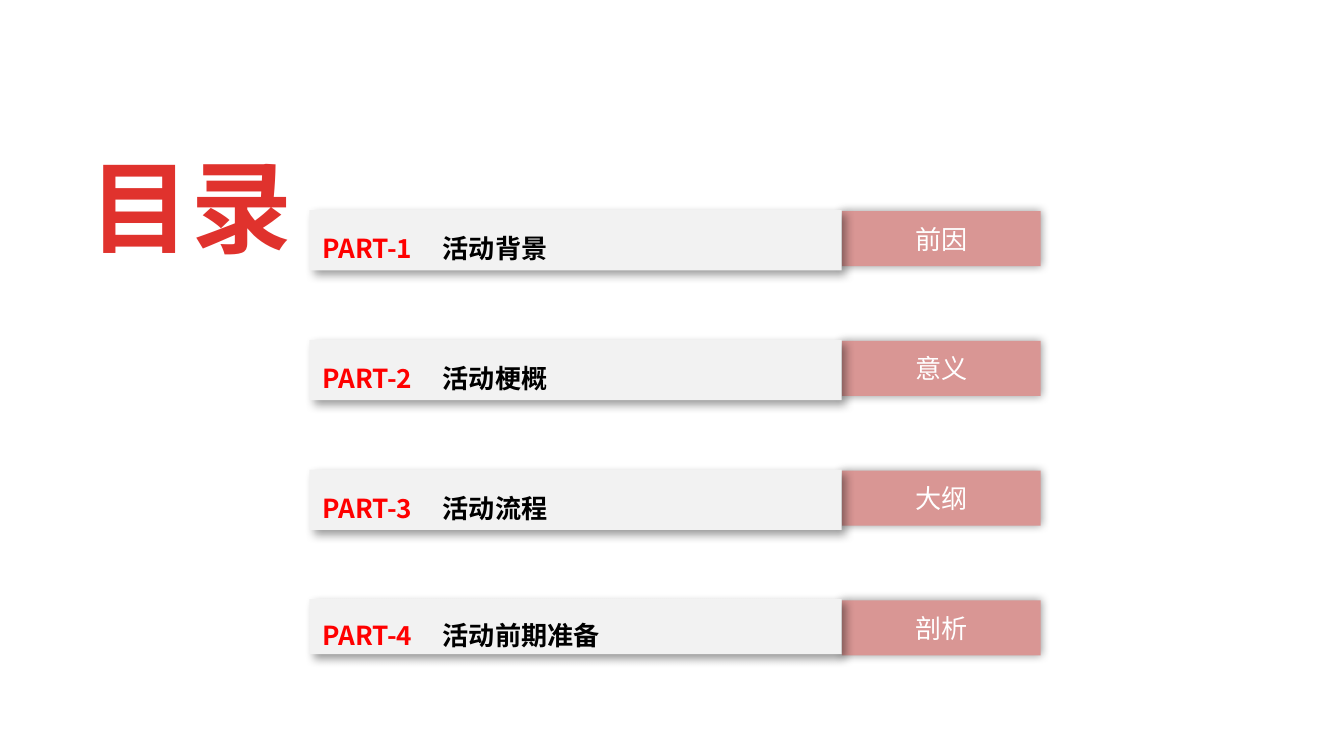
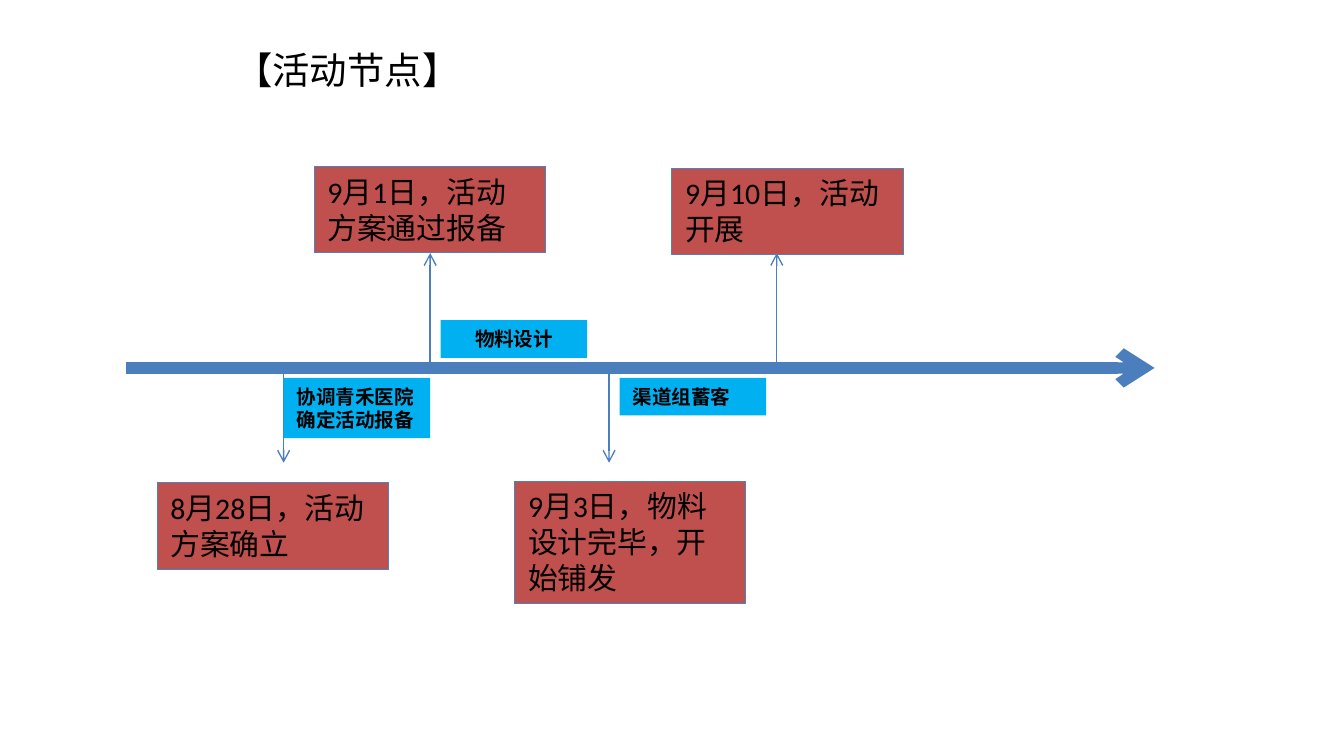
from dataclasses import dataclass
from typing import Any, Optional

from lxml import etree
from pptx import Presentation
from pptx.dml.color import RGBColor
from pptx.enum.shapes import MSO_CONNECTOR, MSO_SHAPE
from pptx.enum.text import MSO_ANCHOR, MSO_AUTO_SIZE, PP_ALIGN
from pptx.oxml.ns import qn
from pptx.util import Cm, Pt

RECT = MSO_SHAPE.RECTANGLE
STRAIGHT = MSO_CONNECTOR.STRAIGHT
LEFT, CENTER = PP_ALIGN.LEFT, PP_ALIGN.CENTER
TOP, MIDDLE = MSO_ANCHOR.TOP, MSO_ANCHOR.MIDDLE
NO_FIT, SHRINK = MSO_AUTO_SIZE.NONE, MSO_AUTO_SIZE.TEXT_TO_FIT_SHAPE

WHITE = RGBColor(0xFF, 0xFF, 0xFF)
BLACK = RGBColor(0x00, 0x00, 0x00)
RED = RGBColor(0xFF, 0x00, 0x00)
TITLE_RED = RGBColor(0xE0, 0x32, 0x2D)
DARK_RED = RGBColor(0xA2, 0x20, 0x1C)
PINK = RGBColor(0xD9, 0x96, 0x94)
PALE_GREY = RGBColor(0xF2, 0xF2, 0xF2)
BRICK = RGBColor(0xC0, 0x50, 0x4D)
SKY = RGBColor(0x00, 0xB0, 0xF0)
AXIS_BLUE = RGBColor(0x4B, 0x7E, 0xBC)
EDGE_BLUE = RGBColor(0x4F, 0x81, 0xBD)

LATIN, CJK = "Calibri", "Noto Sans CJK SC"
CONTENTS_TITLE = {"name": LATIN, "size": Pt(54), "bold": True}
PAGE_TITLE = {"name": CJK, "size": Pt(24), "bold": False}
PART_TEXT = {"name": CJK, "size": Pt(14), "bold": True}
PILL_TEXT = {"name": CJK, "size": Pt(14), "bold": False}
EVENT_TEXT = {"name": LATIN, "size": Pt(16), "bold": False}
TAG_TEXT = {"name": LATIN, "size": Pt(10.5), "bold": True}

ROW_TOP, ROW_PITCH = 3.97, 2.45
AXIS_Y = 6.95


@dataclass
class Box:
    left: float
    top: float
    width: float
    height: float


@dataclass
class Part:
    name: str
    keyword: str
    height: float = 1.14


@dataclass
class Event:
    text: str
    box: Box
    arrow_x: float
    arrow_y: float


@dataclass
class Tag:
    text: str
    box: Box
    align: PP_ALIGN = LEFT


PARTS = [
    Part("活动背景", "前因"),
    Part("活动梗概", "意义"),
    Part("活动流程", "大纲"),
    Part("活动前期准备", "剖析", 1.04),
]
EVENTS = [
    Event("8月28日，活动方案确立", Box(2.97, 9.12, 4.37, 1.63), 5.36, 8.74),
    Event("9月1日，活动方案通过报备", Box(5.94, 3.15, 4.37, 1.63), 8.13, 4.78),
    Event("9月3日，物料设计完毕，开始铺发", Box(9.73, 9.09, 4.37, 2.31), 11.51, 8.74),
    Event("9月10日，活动开展", Box(12.7, 3.18, 4.37, 1.63), 14.68, 4.78),
]
TAGS = [
    Tag("协调青禾医院确定活动报备", Box(5.36, 7.14, 2.77, 1.14)),
    Tag("物料设计", Box(8.33, 6.05, 2.77, 0.71), CENTER),
    Tag("渠道组蓄客", Box(11.71, 7.14, 2.77, 0.71)),
]


def add_run(p: Any, text: str, fmt: dict, color: RGBColor) -> Any:
    r = p.add_run()
    r.text = text
    for name, value in fmt.items():
        setattr(r.font, name, value)
    r.font.color.rgb = color
    ea = etree.SubElement(r.font._element, qn("a:ea"))
    ea.set("typeface", CJK)
    return r


def add_title(s: Any, box: Box, text: str, fmt: dict, align: PP_ALIGN,
              anchor: MSO_ANCHOR, fit: MSO_AUTO_SIZE, color: RGBColor) -> Any:
    sp = s.shapes.title
    for name in ("left", "top", "width", "height"):
        setattr(sp, name, Cm(getattr(box, name)))
    tf = sp.text_frame
    tf.vertical_anchor, tf.auto_size = anchor, fit
    p = tf.paragraphs[0]
    p.alignment = align
    return add_run(p, text, fmt, color)


def add_box(s: Any, box: Box, fill: RGBColor, anchor: MSO_ANCHOR = TOP,
            align: PP_ALIGN = LEFT, edge: Optional[RGBColor] = None) -> Any:
    sp = s.shapes.add_shape(RECT, Cm(box.left), Cm(box.top),
                            Cm(box.width), Cm(box.height))
    sp.shadow.inherit = False
    sp.fill.solid()
    sp.fill.fore_color.rgb = fill
    if edge is None:
        sp.line.fill.background()
    else:
        sp.line.color.rgb = edge
        sp.line.width = Pt(0.5)
    tf = sp.text_frame
    tf.word_wrap = True
    tf.vertical_anchor = anchor
    tf.paragraphs[0].alignment = align
    return sp


def add_shadow(sp: Any, distance: float, angle: int) -> None:
    effects = sp._element.spPr.find(qn("a:effectLst"))
    shadow = etree.SubElement(effects, qn("a:outerShdw"), blurRad=str(Pt(5)),
                              dist=str(Pt(distance)), dir=str(angle * 60000),
                              algn="ctr", rotWithShape="0")
    color = etree.SubElement(shadow, qn("a:srgbClr"), val=str(BLACK))
    etree.SubElement(color, qn("a:alpha"), val="40000")


def add_arrow(s: Any, x1: float, y1: float, x2: float, y2: float, width: float) -> None:
    line = s.shapes.add_connector(STRAIGHT, Cm(x1), Cm(y1), Cm(x2), Cm(y2))
    line.line.color.rgb = AXIS_BLUE
    line.line.width = Pt(width)
    etree.SubElement(line.line._get_or_add_ln(), qn("a:tailEnd"), type="arrow")
    etree.SubElement(line._element.spPr, qn("a:effectLst"))


def add_part(s: Any, index: int, part: Part) -> None:
    top = ROW_TOP + index * ROW_PITCH
    pill = add_box(s, Box(15.91, top + 0.02, 3.76, 1.04), PINK, MIDDLE, CENTER)
    add_shadow(pill, 0, 0)
    add_run(pill.text_frame.paragraphs[0], part.keyword, PILL_TEXT, WHITE)

    bar = add_box(s, Box(5.85, top, 10.06, part.height), PALE_GREY, MIDDLE)
    add_shadow(bar, 3, 45)
    p = bar.text_frame.paragraphs[0]
    tabs = etree.SubElement(p._p.get_or_add_pPr(), qn("a:tabLst"))
    etree.SubElement(tabs, qn("a:tab"), pos=str(Cm(2.27)), algn="l")
    p.line_spacing = 1.5
    add_run(p, f"PART-{index + 1}\t", PART_TEXT, RED)
    add_run(p, part.name, PART_TEXT, BLACK)


def build_contents(s: Any) -> None:
    r = add_title(s, Box(1.4, 2.59, 4.42, 2.57), "目录", CONTENTS_TITLE,
                  CENTER, MIDDLE, NO_FIT, TITLE_RED)
    s.shapes.title.text_frame.word_wrap = False
    r.font._element.set("spc", "50")
    fill = r.font.fill
    fill.gradient()
    fill.gradient_angle = 270
    for stop, position, color in zip(fill.gradient_stops, (0.25, 1), (TITLE_RED, DARK_RED)):
        stop.position = position
        stop.color.rgb = color
    for index, part in enumerate(PARTS):
        add_part(s, index, part)


def build_timeline(s: Any) -> None:
    add_title(s, Box(4.19, 0.79, 21.79, 0.99), "【活动节点】", PAGE_TITLE,
              LEFT, TOP, SHRINK, BLACK)
    add_arrow(s, 2.39, AXIS_Y, 21.82, AXIS_Y, 6)
    for event in EVENTS:
        add_arrow(s, event.arrow_x, AXIS_Y, event.arrow_x, event.arrow_y, 0.75)
    for event in EVENTS:
        sp = add_box(s, event.box, BRICK, edge=EDGE_BLUE)
        add_run(sp.text_frame.paragraphs[0], event.text, EVENT_TEXT, BLACK)
    for tag in TAGS:
        sp = add_box(s, tag.box, SKY, align=tag.align)
        add_run(sp.text_frame.paragraphs[0], tag.text, TAG_TEXT, BLACK)


def main() -> None:
    prs = Presentation()
    prs.slide_width, prs.slide_height = Cm(25.4), Cm(14.28)
    title_only = prs.slide_layouts[5]
    for build in (build_contents, build_timeline):
        build(prs.slides.add_slide(title_only))
    prs.save("out.pptx")


if __name__ == "__main__":
    main()
